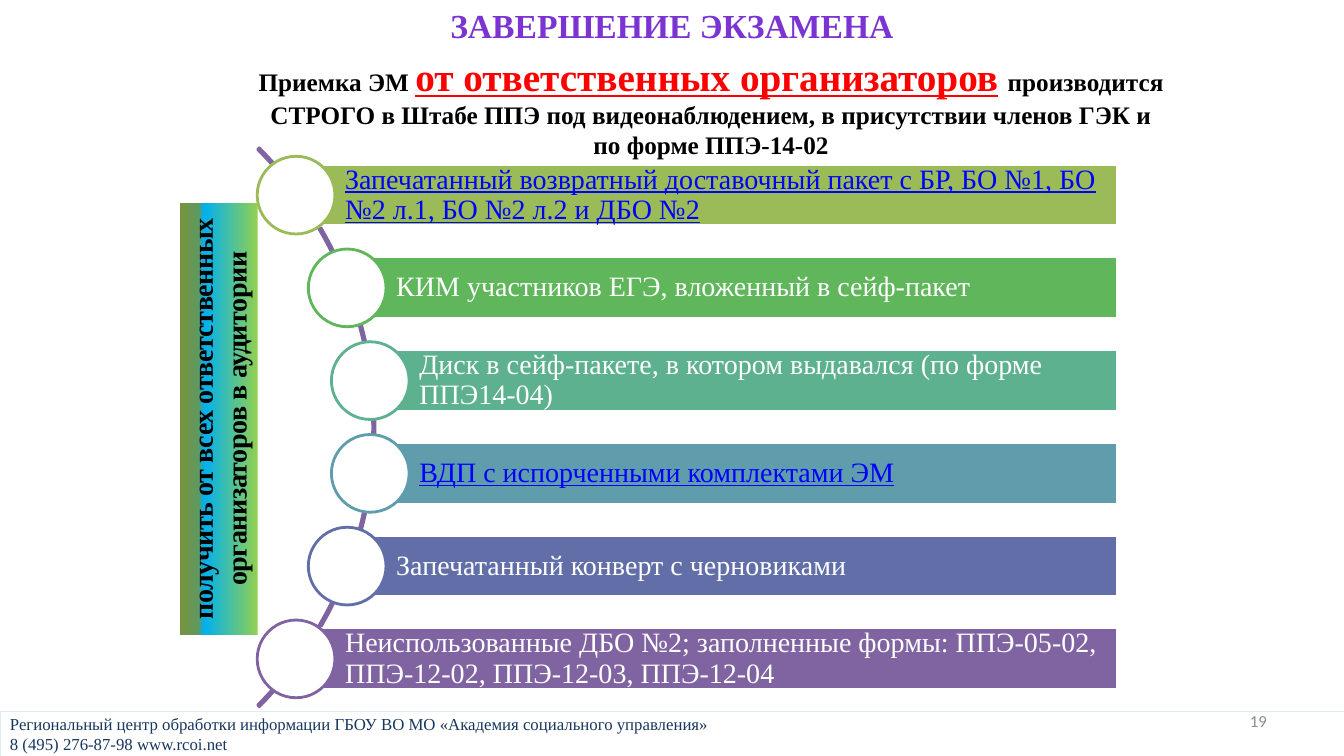
from lxml import etree
from pptx import Presentation
from pptx.dml.color import RGBColor
from pptx.enum.shapes import MSO_SHAPE as SHAPE
from pptx.enum.text import MSO_ANCHOR as ANCHOR, MSO_AUTO_SIZE as AUTO, PP_ALIGN as ALIGN
from pptx.oxml.ns import qn
from pptx.util import Pt

SERIF = "Times New Roman"
BLACK, WHITE, LINK_BLUE, PURPLE = "000000", "FFFFFF", "0000FF", "8064A2"
BAR_RIGHT, BAR_TOP, BAR_HEIGHT, BAR_PITCH = 798, 117.4, 44, 66.25
CIRCLE = 55.5
ITEMS = [  # left edge, colour, underlined, wording
    (211.5, "9BBB59", True, "Запечатанный возвратный доставочный пакет с БР, БО №1, БО №2 л.1, БО №2 л.2 и ДБО №2"),
    (248, "5FB65B", False, "КИМ участников ЕГЭ, вложенный в сейф-пакет"),
    (264.5, "5DB18E", False, "Диск в сейф-пакете, в котором выдавался (по форме ППЭ14-04)"),
    (264.5, "5F9DAC", True, "ВДП с испорченными комплектами ЭМ"),
    (248, "626EA7", False, "Запечатанный конверт с черновиками"),
    (211.5, PURPLE, False, "Неиспользованные ДБО №2; заполненные формы: ППЭ-05-02, ППЭ-12-02, ППЭ-12-03, ППЭ-12-04"),
]


def rgb(value):
    return RGBColor.from_string(value)


def style(font, size, color, bold=False, underline=False, name=SERIF):
    font.name, font.size, font.bold, font.underline = name, Pt(size), bold, underline
    font.color.rgb = rgb(color)


def add_shape(s, kind, x, y, w, h, fill=None, line=None, width=2):
    sp = s.shapes.add_shape(kind, Pt(x), Pt(y), Pt(w), Pt(h))
    sp.shadow.inherit = False
    if fill:
        sp.fill.solid()
        sp.fill.fore_color.rgb = rgb(fill)
    else:
        sp.fill.background()
    if line:
        sp.line.color.rgb = rgb(line)
        sp.line.width = Pt(width)
    else:
        sp.line.fill.background()
    return sp


def add_text(s, x, y, w, h, align, anchor=ANCHOR.TOP):
    """Add a wrapping text box and return its first paragraph."""
    tf = s.shapes.add_textbox(Pt(x), Pt(y), Pt(w), Pt(h)).text_frame
    tf.word_wrap = True
    tf.vertical_anchor = anchor
    tf.paragraphs[0].alignment = align
    return tf.paragraphs[0]


def set_gradient(fill, stops, angle):
    fill.gradient()
    fill.gradient_angle = angle
    gs_list = fill._xPr.find(qn("a:gradFill")).find(qn("a:gsLst"))
    for gs in list(gs_list):
        gs_list.remove(gs)
    for percent, color in stops:
        gs = etree.SubElement(gs_list, qn("a:gs"), pos=str(percent * 1000))
        etree.SubElement(gs, qn("a:srgbClr"), val=color)


def add_title(s):
    sp = s.shapes.title
    sp.left, sp.top, sp.width, sp.height = Pt(120), Pt(0), Pt(720), Pt(36)
    tf = sp.text_frame
    tf.text = "ЗАВЕРШЕНИЕ ЭКЗАМЕНА"
    tf.auto_size = AUTO.NONE
    tf.vertical_anchor = ANCHOR.TOP
    p = tf.paragraphs[0]
    p.alignment = ALIGN.CENTER
    style(p.font, 24, "7B34D2", bold=True)


def add_intro(s):
    p = add_text(s, 175.7, 33.8, 664.5, 85, ALIGN.CENTER)
    for text, size, color, underline in (
        ("Приемка ЭМ ", 18, BLACK, False),
        ("от ответственных организаторов", 28, "FF0000", True),
        (" ", 28, "FF0000", False),
        ("производится СТРОГО в Штабе ППЭ под видеонаблюдением, "
         "в присутствии членов ГЭК и по форме ППЭ-14-02", 18, BLACK, False),
    ):
        r = p.add_run()
        r.text = text
        style(r.font, size, color, bold=True, underline=underline)


def add_arc(s):
    sp = add_shape(s, SHAPE.BLOCK_ARC, -296.6, 23, 564.5, 564.5, line=PURPLE)
    for i, value in enumerate((189, 27, 0.003)):
        sp.adjustments[i] = value


def add_item(s, row, left, color, underline, text):
    top = BAR_TOP + row * BAR_PITCH
    bar = add_shape(s, SHAPE.RECTANGLE, left, top, BAR_RIGHT - left, BAR_HEIGHT, color, WHITE)
    tf = bar.text_frame
    tf.text = text
    tf.word_wrap = True
    tf.vertical_anchor = ANCHOR.MIDDLE
    tf.margin_left = Pt(35)
    tf.margin_top = tf.margin_right = tf.margin_bottom = Pt(4)
    p = tf.paragraphs[0]
    p.alignment = ALIGN.LEFT
    p.line_spacing = 0.9
    style(p.font, 20, LINK_BLUE if underline else WHITE, underline=underline)
    add_shape(s, SHAPE.OVAL, left - CIRCLE / 2, top + (BAR_HEIGHT - CIRCLE) / 2,
              CIRCLE, CIRCLE, WHITE, color)


def add_side_label(s):
    sp = add_shape(s, SHAPE.RECTANGLE, 2.2, 271.4, 308.2, 55.5)
    sp.rotation = 270
    set_gradient(sp.fill, [(0, "92D050"), (69, "00B0F0"), (76, "5F9960"), (100, "77933C")], 90)
    tf = sp.text_frame
    tf.text = "получить от\u00a0всех ответственных\nорганизаторов в\u00a0аудитории"
    tf.word_wrap = False
    tf.vertical_anchor = ANCHOR.TOP
    for p in tf.paragraphs:
        p.alignment = ALIGN.CENTER
        style(p.font, 20, BLACK, bold=True)
        for r in p.runs:
            r.font._element.set("spc", "-30")


def add_footer(s):
    sp = add_shape(s, SHAPE.RECTANGLE, 0, 508.3, 960, 31.7, WHITE, "DBEEF4", 0.5)
    tf = sp.text_frame
    tf.text = ("Региональный центр обработки информации ГБОУ ВО МО «Академия социального управления»\n"
               "8 (495) 276-87-98 www.rcoi.net")
    tf.word_wrap = True
    tf.vertical_anchor = ANCHOR.MIDDLE
    for p in tf.paragraphs:
        p.alignment = ALIGN.LEFT
        style(p.font, 12, "17375E")
    number = add_text(s, 688, 500.5, 224, 28.75, ALIGN.RIGHT, ANCHOR.MIDDLE)
    number.text = "19"
    style(number.font, 12, "8C8C8C", name="Calibri")


def main():
    prs = Presentation()
    prs.slide_width, prs.slide_height = Pt(960), Pt(540)
    s = prs.slides.add_slide(prs.slide_layouts[5])
    add_title(s)
    add_intro(s)
    add_arc(s)
    for row, item in enumerate(ITEMS):
        add_item(s, row, *item)
    add_side_label(s)
    add_footer(s)
    prs.save("out.pptx")


if __name__ == "__main__":
    main()
